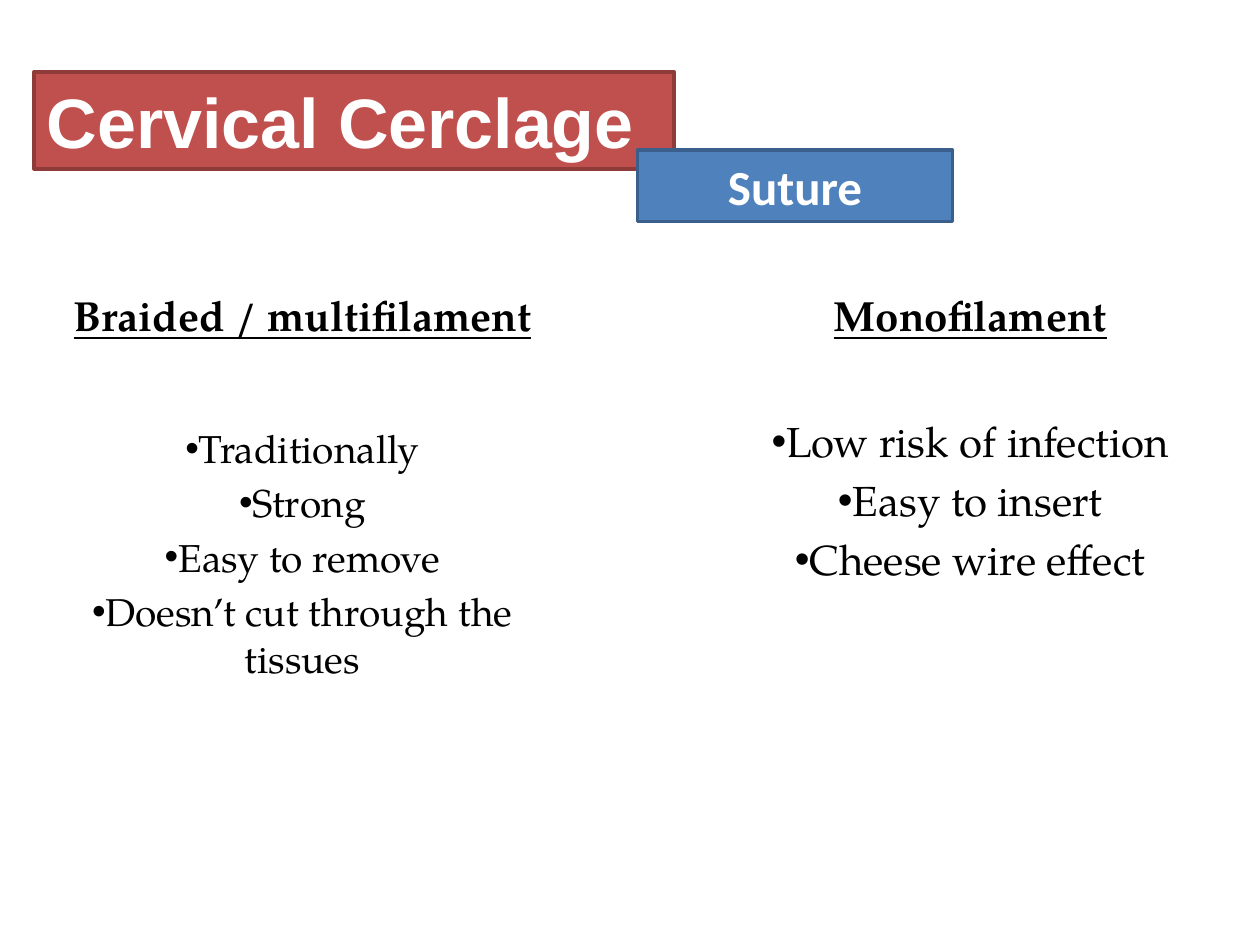
from dataclasses import dataclass

from lxml.etree import SubElement
from pptx import Presentation
from pptx.dml.color import RGBColor
from pptx.enum.shapes import MSO_SHAPE
from pptx.enum.text import MSO_ANCHOR, MSO_AUTO_SIZE, PP_ALIGN
from pptx.oxml.ns import qn
from pptx.shapes.base import BaseShape
from pptx.util import Inches, Pt

BLACK = RGBColor(0x00, 0x00, 0x00)
WHITE = RGBColor(0xFF, 0xFF, 0xFF)
RED = RGBColor(0xC0, 0x50, 0x4D)
DARK_RED = RGBColor(0x8E, 0x3B, 0x39)
BLUE = RGBColor(0x4F, 0x81, 0xBD)
DARK_BLUE = RGBColor(0x3A, 0x5F, 0x8C)

COMPARISON_LAYOUT = 4
COLUMN_WIDTH = 4.42
HEADING_TOP, HEADING_HEIGHT = 2.03, 0.72
LIST_HEIGHT = 2.02
BODY_FONT = "TeX Gyre Pagella"
HEADING_SIZE = 24


@dataclass
class Column:
    heading_index: int
    list_index: int
    left: float
    list_top: float
    list_size: float
    heading: str
    items: list[str]


@dataclass
class Banner:
    text: str
    box: tuple[float, float, float, float]
    fill: RGBColor
    line: RGBColor
    font: str
    size: float
    alignment: PP_ALIGN


COLUMNS = [
    Column(1, 2, 0.19, 3.32, 22.2, "Braided / multifilament",
           ["Traditionally", "Strong", "Easy to remove", "Doesn’t cut through the tissues"]),
    Column(3, 4, 5.49, 3.25, 24, "Monofilament",
           ["Low risk of infection", "Easy to insert", "Cheese wire effect"]),
]
TITLE = Banner("Cervical Cerclage", (0.27, 0.57, 5.08, 0.77), RED, DARK_RED,
               "Arial", 40, PP_ALIGN.LEFT)
TOPIC = Banner("Suture", (5.06, 1.19, 2.5, 0.57), BLUE, DARK_BLUE,
               "Calibri", 28, PP_ALIGN.CENTER)


def place(shape: BaseShape, left: float, top: float, width: float, height: float) -> None:
    shape.left, shape.top = Inches(left), Inches(top)
    shape.width, shape.height = Inches(width), Inches(height)


def write(shape: BaseShape, lines: list[str], font: str, size: float, color: RGBColor,
          alignment: PP_ALIGN, anchor: MSO_ANCHOR, bold: bool = False,
          underline: bool = False, gap: float = 0) -> None:
    frame = shape.text_frame
    frame.text = "\n".join(lines)
    frame.word_wrap = True
    frame.auto_size = MSO_AUTO_SIZE.NONE
    frame.vertical_anchor = anchor
    for index, paragraph in enumerate(frame.paragraphs):
        paragraph.alignment = alignment
        paragraph.space_before = Pt(gap if index else 0)
        for run in paragraph.runs:
            run.font.name = font
            run.font.size = Pt(size)
            run.font.bold = bold
            run.font.underline = underline
            run.font.color.rgb = color


def add_bullets(shape: BaseShape) -> None:
    for paragraph in shape.text_frame.paragraphs:
        properties = paragraph._p.get_or_add_pPr()
        properties.set("marL", "0")
        properties.set("indent", "0")
        SubElement(properties, qn("a:buFont")).set("typeface", "Arial")
        SubElement(properties, qn("a:buChar")).set("char", "•")


def draw_banner(shape: BaseShape, banner: Banner) -> None:
    place(shape, *banner.box)
    shape.fill.solid()
    shape.fill.fore_color.rgb = banner.fill
    shape.line.color.rgb = banner.line
    shape.line.width = Pt(2)
    write(shape, [banner.text], banner.font, banner.size, WHITE,
          banner.alignment, MSO_ANCHOR.MIDDLE, bold=True)


def draw_column(placeholders, column: Column) -> None:
    heading = placeholders[column.heading_index]
    place(heading, column.left, HEADING_TOP, COLUMN_WIDTH, HEADING_HEIGHT)
    write(heading, [column.heading], BODY_FONT, HEADING_SIZE, BLACK,
          PP_ALIGN.CENTER, MSO_ANCHOR.BOTTOM, bold=True, underline=True)
    items = placeholders[column.list_index]
    place(items, column.left, column.list_top, COLUMN_WIDTH, LIST_HEIGHT)
    write(items, column.items, BODY_FONT, column.list_size, BLACK,
          PP_ALIGN.CENTER, MSO_ANCHOR.TOP, gap=round(column.list_size * 0.2, 1))
    add_bullets(items)


def main() -> None:
    presentation = Presentation()
    presentation.slide_width = Inches(10)
    presentation.slide_height = Inches(7.5)
    slide = presentation.slides.add_slide(presentation.slide_layouts[COMPARISON_LAYOUT])
    for column in COLUMNS:
        draw_column(slide.placeholders, column)
    draw_banner(slide.shapes.title, TITLE)
    topic = slide.shapes.add_shape(MSO_SHAPE.RECTANGLE, 0, 0, 0, 0)
    topic.shadow.inherit = False
    draw_banner(topic, TOPIC)
    presentation.save("out.pptx")


if __name__ == "__main__":
    main()
